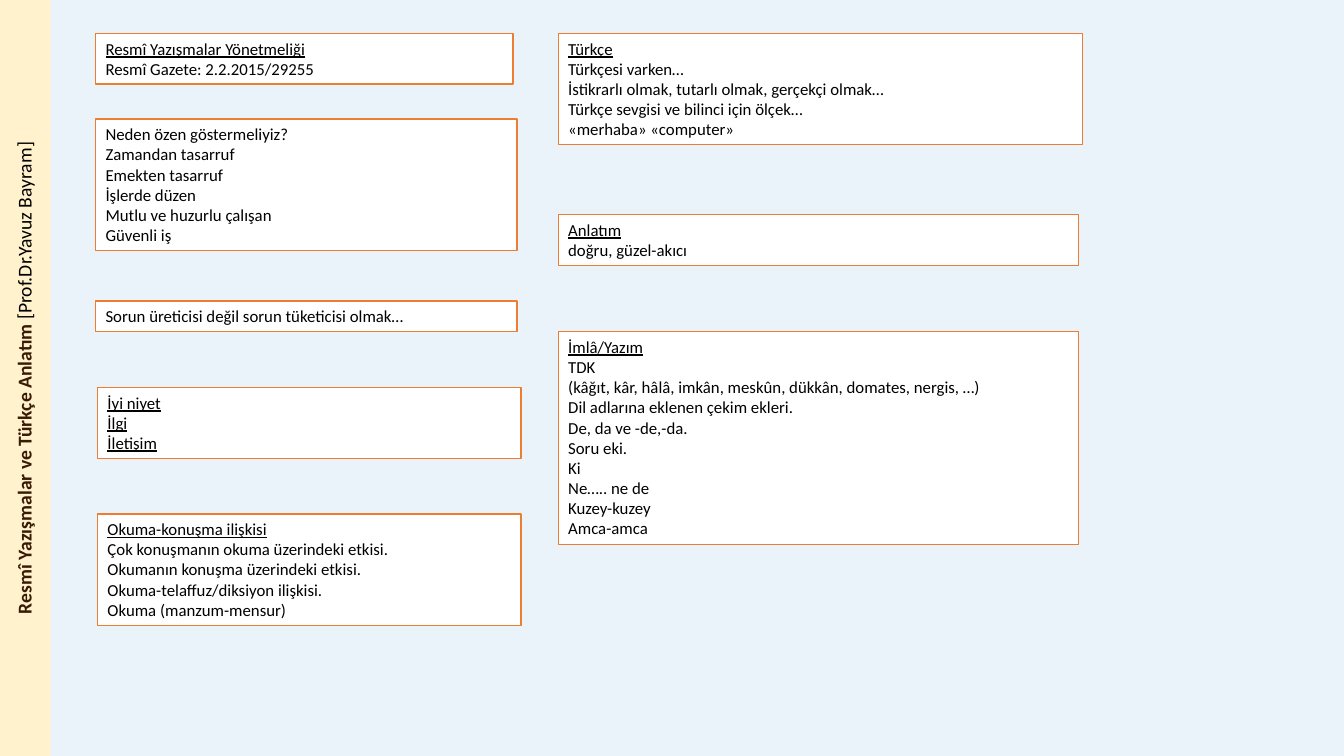
from dataclasses import dataclass

from pptx import Presentation
from pptx.dml.color import RGBColor
from pptx.enum.shapes import MSO_SHAPE
from pptx.enum.text import MSO_ANCHOR, MSO_AUTO_SIZE, PP_ALIGN
from pptx.shapes.autoshape import Shape
from pptx.slide import Slide
from pptx.text.text import _Paragraph
from pptx.util import Cm, Pt


@dataclass(frozen=True)
class Theme:
    font: str = "Calibri"
    note_size: int = 12
    title_size: int = 14
    background: str = "EAF2FA"
    band: str = "FFF2CC"
    note_fill: str = "FFFFFF"
    note_border: str = "ED7D31"
    text: str = "000000"
    title: str = "391A05"


@dataclass(frozen=True)
class Note:
    left: float
    top: float
    width: float
    lines: tuple[str, ...]
    underlined: int = 1  # how many of the first lines are underlined


THEME = Theme()
SLIDE_WIDTH, SLIDE_HEIGHT = 33.87, 19.05
BAND_WIDTH = 1.27
LINE_HEIGHT, NOTE_PADDING = 0.51, 0.26
RIGHT_COLUMN = 14.07

NOTES = (
    Note(2.41, 0.84, 10.52, (
        "Resmî Yazışmalar Yönetmeliği",
        "Resmî Gazete: 2.2.2015/29255",
    )),
    Note(2.41, 3, 10.62, (
        "Neden özen göstermeliyiz?",
        "Zamandan tasarruf",
        "Emekten tasarruf",
        "İşlerde düzen",
        "Mutlu ve huzurlu çalışan",
        "Güvenli iş",
    ), underlined=0),
    Note(2.41, 7.59, 10.62, (
        "Sorun üreticisi değil sorun tüketicisi olmak…",
    ), underlined=0),
    Note(2.46, 9.76, 10.67, ("İyi niyet", "İlgi", "İletişim"), underlined=3),
    Note(2.46, 12.95, 10.67, (
        "Okuma-konuşma ilişkisi",
        "Çok konuşmanın okuma üzerindeki etkisi.",
        "Okumanın konuşma üzerindeki etkisi.",
        "Okuma-telaffuz/diksiyon ilişkisi.",
        "Okuma (manzum-mensur)",
    )),
    Note(RIGHT_COLUMN, 0.84, 13.21, (
        "Türkçe",
        "Türkçesi varken…",
        "İstikrarlı olmak, tutarlı olmak, gerçekçi olmak…",
        "Türkçe sevgisi ve bilinci için ölçek…",
        "«merhaba» «computer»",
    )),
    Note(RIGHT_COLUMN, 5.41, 13.11, ("Anlatım", "doğru, güzel-akıcı")),
    Note(RIGHT_COLUMN, 8.36, 13.11, (
        "İmlâ/Yazım",
        "TDK",
        "(kâğıt, kâr, hâlâ, imkân, meskûn, dükkân, domates, nergis, …)",
        "Dil adlarına eklenen çekim ekleri.",
        "De, da ve -de,-da.",
        "Soru eki.",
        "Ki",
        "Ne….. ne de",
        "Kuzey-kuzey",
        "Amca-amca",
    )),
)


def add_text(paragraph: _Paragraph, text: str, *, size: int = THEME.note_size,
             color: str = THEME.text, bold: bool = False,
             underline: bool = False) -> None:
    run = paragraph.add_run()
    run.text = text
    run.font.name = THEME.font
    run.font.size = Pt(size)
    run.font.color.rgb = RGBColor.from_string(color)
    run.font.bold = bold
    run.font.underline = underline


def add_box(slide: Slide, left: float, top: float, width: float,
            height: float, fill: str, border: str | None = None) -> Shape:
    box = slide.shapes.add_shape(
        MSO_SHAPE.RECTANGLE, Cm(left), Cm(top), Cm(width), Cm(height))
    box.shadow.inherit = False
    box.fill.solid()
    box.fill.fore_color.rgb = RGBColor.from_string(fill)
    if border:
        box.line.color.rgb = RGBColor.from_string(border)
        box.line.width = Pt(1)
    else:
        box.line.fill.background()
    box.text_frame.word_wrap = True
    return box


def add_note(slide: Slide, note: Note) -> None:
    height = LINE_HEIGHT * len(note.lines) + NOTE_PADDING
    frame = add_box(slide, note.left, note.top, note.width, height,
                    THEME.note_fill, THEME.note_border).text_frame
    frame.auto_size = MSO_AUTO_SIZE.SHAPE_TO_FIT_TEXT
    frame.vertical_anchor = MSO_ANCHOR.TOP
    for index, line in enumerate(note.lines):
        paragraph = frame.add_paragraph() if index else frame.paragraphs[0]
        paragraph.alignment = PP_ALIGN.LEFT
        add_text(paragraph, line, underline=index < note.underlined)


def add_title_band(slide: Slide) -> None:
    """Fill the left edge with a band whose title reads upwards."""
    band = add_box(slide, (BAND_WIDTH - SLIDE_HEIGHT) / 2,
                   (SLIDE_HEIGHT - BAND_WIDTH) / 2,
                   SLIDE_HEIGHT, BAND_WIDTH, THEME.band)
    band.rotation = 270
    band.text_frame.vertical_anchor = MSO_ANCHOR.MIDDLE
    title = band.text_frame.paragraphs[0]
    title.alignment = PP_ALIGN.CENTER
    title.line_spacing = 0.9
    title.space_before = title.space_after = Pt(6)
    add_text(title, "Resmî Yazışmalar ve Türkçe Anlatım ",
             size=THEME.title_size, color=THEME.title, bold=True)
    add_text(title, "[Prof.Dr.Yavuz Bayram]", size=THEME.title_size)


def main() -> None:
    presentation = Presentation()
    presentation.slide_width = Cm(SLIDE_WIDTH)
    presentation.slide_height = Cm(SLIDE_HEIGHT)
    slide = presentation.slides.add_slide(presentation.slide_layouts[6])
    slide.background.fill.solid()
    slide.background.fill.fore_color.rgb = RGBColor.from_string(THEME.background)
    add_title_band(slide)
    for note in NOTES:
        add_note(slide, note)
    presentation.save("out.pptx")


if __name__ == "__main__":
    main()
